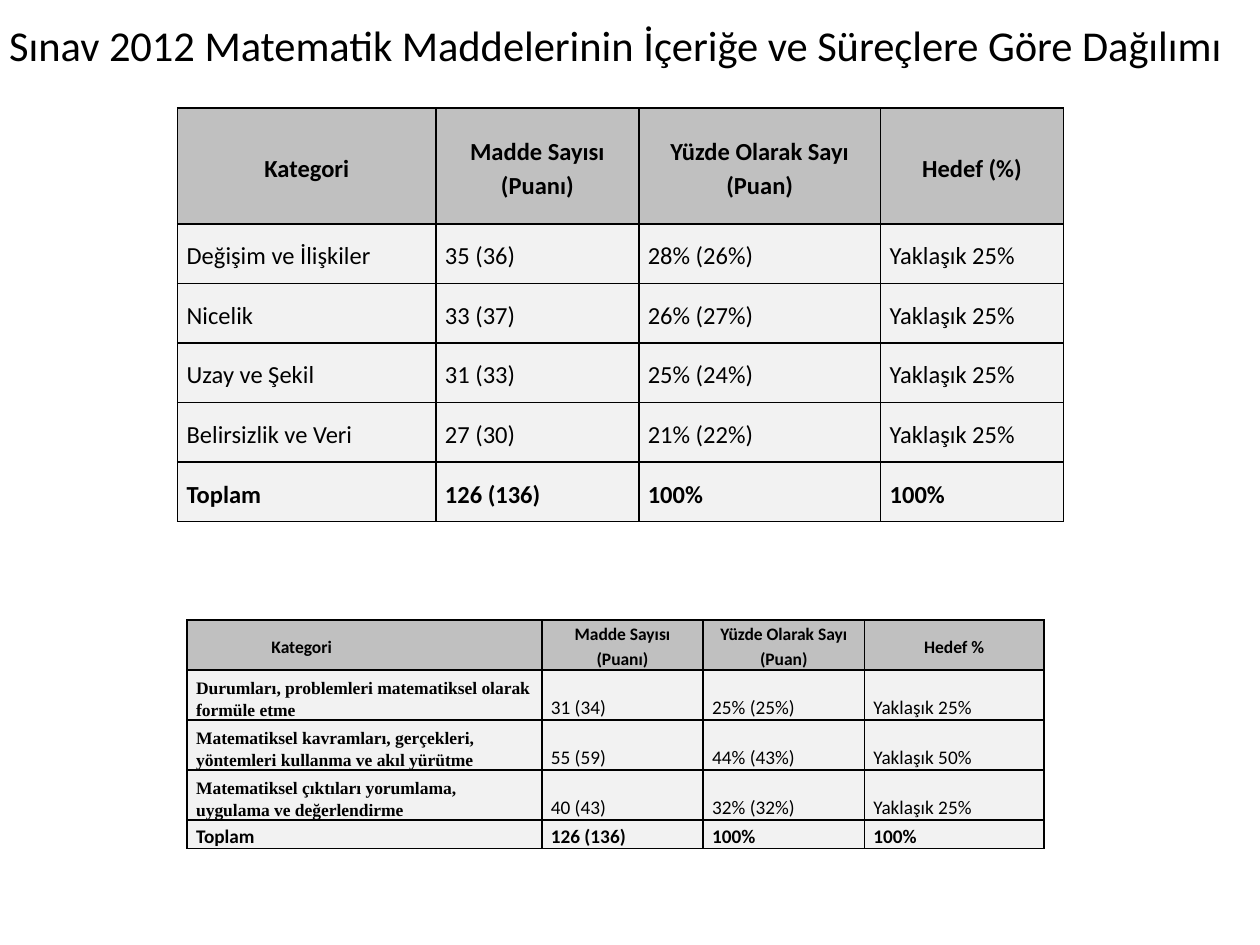
from dataclasses import dataclass

from lxml.etree import SubElement
from pptx import Presentation
from pptx.dml.color import RGBColor
from pptx.enum.text import MSO_ANCHOR, PP_ALIGN
from pptx.oxml.ns import qn
from pptx.util import Inches, Length, Pt

BLACK = RGBColor(0x00, 0x00, 0x00)
HEADER_GREY = RGBColor(0xC0, 0xC0, 0xC0)
BODY_GREY = RGBColor(0xF2, 0xF2, 0xF2)
SLIDE_WIDTH, SLIDE_HEIGHT = Inches(10), Inches(7.5)
SANS, SERIF = "Calibri", "Times New Roman"


@dataclass(frozen=True)
class Distribution:
    """A table whose lengths are percentages of the slide's size."""
    left: float
    top: float
    columns: tuple[float, ...]
    rows: tuple[float, ...]
    cells: tuple[tuple[str, ...], ...]
    header_size: float
    body_size: float
    anchor: MSO_ANCHOR
    serif_categories: bool = False
    category_indent: float | None = None  # left-aligns the first heading


CONTENT = Distribution(
    left=14.1, top=11.42,
    columns=(20.5, 16.1, 19.2, 14.5), rows=(12.27,) + (6.3,) * 5,
    cells=(
        ("Kategori", "Madde Sayısı (Puanı)", "Yüzde Olarak Sayı (Puan)", "Hedef (%)"),
        ("Değişim ve İlişkiler", "35 (36)", "28% (26%)", "Yaklaşık 25%"),
        ("Nicelik", "33 (37)", "26% (27%)", "Yaklaşık 25%"),
        ("Uzay ve Şekil", "31 (33)", "25% (24%)", "Yaklaşık 25%"),
        ("Belirsizlik ve Veri", "27 (30)", "21% (22%)", "Yaklaşık 25%"),
        ("Toplam", "126 (136)", "100%", "100%"),
    ),
    header_size=14, body_size=14, anchor=MSO_ANCHOR.MIDDLE,
)

PROCESSES = Distribution(
    left=14.85, top=65.6,
    columns=(28.15, 12.8, 12.8, 14.25), rows=(5.3,) * 4 + (3,),
    cells=(
        ("Kategori", "Madde Sayısı (Puanı)", "Yüzde Olarak Sayı (Puan)", "Hedef %"),
        ("Durumları, problemleri matematiksel olarak formüle etme",
         "31 (34)", "25% (25%)", "Yaklaşık 25%"),
        ("Matematiksel kavramları, gerçekleri, yöntemleri kullanma ve akıl yürütme",
         "55 (59)", "44% (43%)", "Yaklaşık 50%"),
        ("Matematiksel çıktıları yorumlama, uygulama ve değerlendirme",
         "40 (43)", "32% (32%)", "Yaklaşık 25%"),
        ("Toplam", "126 (136)", "100%", "100%"),
    ),
    header_size=10, body_size=11, anchor=MSO_ANCHOR.BOTTOM,
    serif_categories=True, category_indent=6.7,
)


def across(percent: float) -> Length:
    return Length(round(SLIDE_WIDTH * percent / 100))


def down(percent: float) -> Length:
    return Length(round(SLIDE_HEIGHT * percent / 100))


def style_text(paragraph, size: float, bold: bool = False, font: str = SANS) -> None:
    for run in paragraph.runs:
        run.font.name = font
        run.font.size = Pt(size)
        run.font.bold = bold
        run.font.color.rgb = BLACK


def add_borders(cell) -> None:
    properties = cell._tc.get_or_add_tcPr()
    for side in ("a:lnL", "a:lnR", "a:lnT", "a:lnB"):
        line = SubElement(properties, qn(side), w=str(Pt(1)))
        SubElement(SubElement(line, qn("a:solidFill")), qn("a:srgbClr"), val=str(BLACK))


def fill_cell(cell, wording: str, fill: RGBColor, anchor: MSO_ANCHOR):
    """Fill and border the cell, and return its paragraph for styling."""
    add_borders(cell)
    cell.fill.solid()
    cell.fill.fore_color.rgb = fill
    cell.margin_left = cell.margin_right = across(0.72)
    cell.margin_top, cell.margin_bottom = down(0.13), 0
    cell.vertical_anchor = anchor
    cell.text_frame.text = wording
    paragraph = cell.text_frame.paragraphs[0]
    paragraph.line_spacing = 1.15
    paragraph.space_after = Pt(10)
    return paragraph


def add_distribution(slide, plan: Distribution) -> None:
    table = slide.shapes.add_table(
        len(plan.rows), len(plan.columns), across(plan.left), down(plan.top),
        across(sum(plan.columns)), down(sum(plan.rows))).table
    for column, width in zip(table.columns, plan.columns):
        column.width = across(width)
    for row, height in zip(table.rows, plan.rows):
        row.height = down(height)

    last = len(plan.rows) - 1
    for r, wordings in enumerate(plan.cells):
        for c, wording in enumerate(wordings):
            cell = table.cell(r, c)
            if r == 0:
                heading = fill_cell(cell, wording, HEADER_GREY, MSO_ANCHOR.MIDDLE)
                heading.alignment = PP_ALIGN.CENTER
                style_text(heading, plan.header_size, bold=True)
                continue
            value = fill_cell(cell, wording, BODY_GREY, plan.anchor)
            if plan.serif_categories and c == 0 and r < last:
                style_text(value, plan.header_size, bold=True, font=SERIF)
            else:
                style_text(value, plan.body_size, bold=r == last)

    if plan.category_indent is not None:
        category = table.cell(0, 0)
        category.margin_left = across(plan.category_indent)
        category.text_frame.paragraphs[0].alignment = PP_ALIGN.LEFT


def add_title(slide, wording: str) -> None:
    frame = slide.shapes.add_textbox(0, down(1.07), across(97.7), down(7.33)).text_frame
    frame.word_wrap = True
    frame.vertical_anchor = MSO_ANCHOR.MIDDLE
    frame.margin_left = frame.margin_right = 0
    frame.text = wording
    title = frame.paragraphs[0]
    title.alignment = PP_ALIGN.CENTER
    style_text(title, 24.3)


def main() -> None:
    presentation = Presentation()
    presentation.slide_width, presentation.slide_height = SLIDE_WIDTH, SLIDE_HEIGHT
    slide = presentation.slides.add_slide(presentation.slide_layouts[6])
    add_title(slide, "Sınav 2012 Matematik Maddelerinin İçeriğe ve Süreçlere Göre Dağılımı")
    for plan in (CONTENT, PROCESSES):
        add_distribution(slide, plan)
    presentation.save("out.pptx")


if __name__ == "__main__":
    main()
